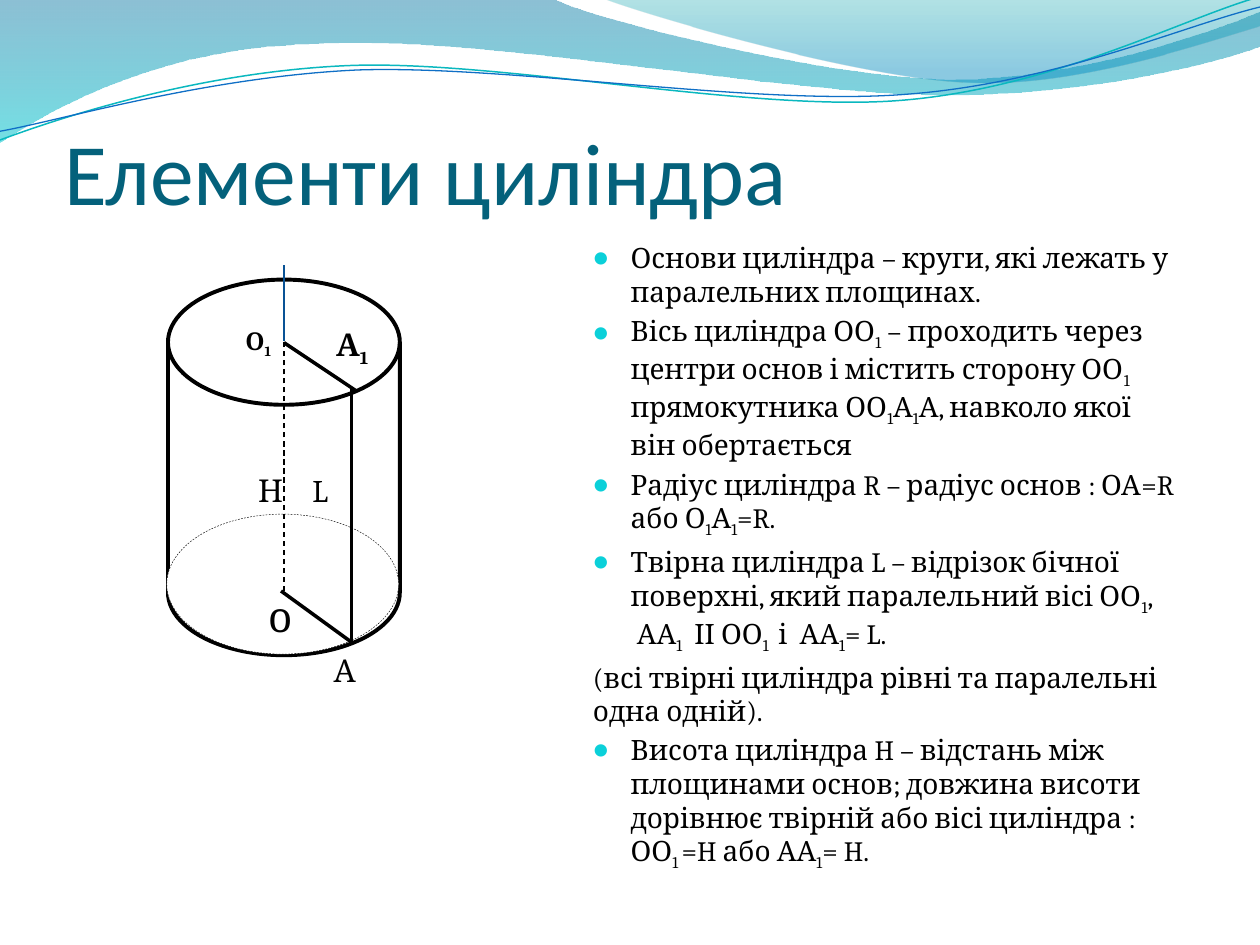
from lxml import etree
from pptx import Presentation
from pptx.dml.color import RGBColor
from pptx.enum.dml import MSO_LINE
from pptx.enum.shapes import MSO_CONNECTOR, MSO_SHAPE
from pptx.enum.text import MSO_ANCHOR
from pptx.oxml.ns import qn
from pptx.util import Pt

STRAIGHT = MSO_CONNECTOR.STRAIGHT
DISK = MSO_SHAPE.FLOWCHART_MAGNETIC_DISK
OVAL = MSO_SHAPE.OVAL
DASH = MSO_LINE.DASH
BOTTOM = MSO_ANCHOR.BOTTOM

COLORS = {
    "black": "000000", "white": "FFFFFF", "title": "04617B", "bullet": "0BD0D9",
    "axis": "095295", "teal": "0AB8BF", "blue": "0F6FC6",
    "wave_top": "0074A1", "wave_bottom": "00C6CF",
    "crest_top": "00A1A9", "crest_bottom": "008BBF",
}
RGB = {name: RGBColor.from_string(value) for name, value in COLORS.items()}

prs = Presentation()
prs.slide_width, prs.slide_height = Pt(720), Pt(540)
s = prs.slides.add_slide(prs.slide_layouts[6])


def add_curve(start, segments, close):
    points = [(Pt(seg[i]), Pt(seg[i + 1])) for seg in segments for i in range(0, len(seg), 2)]
    builder = s.shapes.build_freeform(Pt(start[0]), Pt(start[1]))
    builder.add_line_segments(points, close=close)
    sp = builder.convert_to_shape()
    sp.shadow.inherit = False
    steps = iter(list(sp._element.iter(qn("a:lnTo"))))
    for seg in segments:
        step = next(steps)
        if len(seg) == 6:
            curve = etree.Element(qn("a:cubicBezTo"))
            step.addprevious(curve)
            for part in (step, next(steps), next(steps)):
                curve.append(part[0])
                part.getparent().remove(part)
    return sp


def write(p, text, size, font="Cambria", color="black", bold=False):
    for n, line in enumerate(text.split("\v")):
        if n:
            p.add_line_break()
        for i, piece in enumerate(line.split("|")):
            if not piece:
                continue
            r = p.add_run()
            r.text = piece
            r.font.size = Pt(size)
            r.font.name = font
            r.font.bold = bold
            r.font.color.rgb = RGB[color]
            if i % 2:
                r.font._element.set("baseline", "-25000")


waves = [
    ((-0.5, 0), [(317, -0.5), (343, 12, 478, 45, 546, 45), (614, 45, 690, 19, 720, 6.5),
                 (720.5, 26), (708, 32, 626, 55, 537, 54), (448, 54, 275, 20, 185, 24.5),
                 (93, 26, 33, 60, -0.5, 81.5)],
     [("wave_top", 45), ("wave_bottom", 55)], 1),
    ((345, -0.5), [(366, 8, 491, 45, 554, 47), (616, 50, 692, 23, 720, 15), (720, 0)],
     [("crest_top", 30), ("crest_bottom", 45)], 0.8),
]
for start, segments, stops, end in waves:
    sp = add_curve(start, segments, True)
    sp.line.fill.background()
    sp.fill.gradient()
    sp.fill.gradient_angle = 270
    for stop, (color, opacity), position in zip(sp.fill.gradient_stops, stops, (0, end)):
        stop.color.rgb = RGB[color]
        stop.position = position
    for clr, (color, opacity) in zip(sp._element.spPr.iter(qn("a:srgbClr")), stops):
        etree.SubElement(clr, qn("a:alpha"), val=str(opacity * 1000))

strands = [
    ((0, 80), [(35, 67, 114, 41, 199, 37.5), (284, 34, 427, 64, 513, 57.5),
               (600, 51, 675, 11, 718.5, -1.5)], "teal", 0.85),
    ((0, 75), [(34, 69, 118, 44, 204, 40), (290, 37, 430, 60.5, 516, 54),
               (602, 48, 675, 15, 720, 4)], "blue", 0.75),
]
for start, segments, color, width in strands:
    sp = add_curve(start, segments, False)
    sp.fill.background()
    sp.line.color.rgb = RGB[color]
    sp.line.width = Pt(width)

title = s.shapes.add_textbox(Pt(36.7), Pt(37.4), Pt(648), Pt(90))
tf = title.text_frame
tf.word_wrap = True
tf.vertical_anchor = BOTTOM
tf.margin_left = tf.margin_right = tf.margin_bottom = 0
write(tf.paragraphs[0], "Елементи циліндра", 50, "Calibri", "title")

definitions = [
    ("Основи циліндра – круги, які лежать у паралельних площинах.", True),
    ("Вісь циліндра ОО|1| – проходить через центри основ і містить сторону ОО|1 |"
     "прямокутника ОО|1|А|1|А, навколо якої він обертається", True),
    ("Радіус циліндра R – радіус основ : ОА=R або О|1|А|1|=R.", True),
    ("Твірна циліндра L – відрізок бічної поверхні, який паралельний вісі ОО|1|,\v"
     " АА|1|  ІІ ОО|1 | і  АА|1|= L.", True),
    ("(всі твірні циліндра рівні та паралельні одна одній).", False),
    ("Висота циліндра H – відстань між площинами основ; довжина висоти "
     "дорівнює твірній або вісі циліндра :\vОО|1 |=H або АА|1|= H.", True),
]
body = s.shapes.add_textbox(Pt(331.7), Pt(134), Pt(348), Pt(374))
tf = body.text_frame
tf.word_wrap = True
for i, (text, bulleted) in enumerate(definitions):
    p = tf.add_paragraph() if i else tf.paragraphs[0]
    p.space_before = Pt(3.2)
    write(p, text, 16)
    if bulleted:
        pPr = p._p.get_or_add_pPr()
        pPr.set("marL", str(Pt(21.6)))
        pPr.set("indent", str(-Pt(21.6)))
        clr = etree.SubElement(pPr, qn("a:buClr"))
        etree.SubElement(clr, qn("a:srgbClr"), val=COLORS["bullet"])
        etree.SubElement(pPr, qn("a:buSzPct"), val="95000")
        etree.SubElement(pPr, qn("a:buFont"), typeface="Calibri")
        etree.SubElement(pPr, qn("a:buChar"), char="●")

solids = [
    (DISK, 96, 159.8, 132.5, 214.6, 2.25, None),
    (OVAL, 95.3, 293.8, 132.5, 80, 0.25, DASH),
]
for kind, x, y, w, h, width, dash in solids:
    sp = s.shapes.add_shape(kind, Pt(x), Pt(y), Pt(w), Pt(h))
    sp.shadow.inherit = False
    sp.fill.solid()
    sp.fill.fore_color.rgb = RGB["white"]
    sp.line.color.rgb = RGB["black"]
    sp.line.width = Pt(width)
    sp.line.dash_style = dash

segments = [
    (162.3, 337.7, 162.3, 195, "black", 0.75, DASH),
    (162.3, 195.8, 203, 223, "black", 2, None),
    (200.9, 221, 200.9, 366.5, "black", 2, None),
    (160.6, 337.7, 200.9, 367, "black", 2, None),
    (162.3, 195, 162.3, 151.2, "axis", 0.75, None),
]
for x1, y1, x2, y2, color, width, dash in segments:
    c = s.shapes.add_connector(STRAIGHT, Pt(x1), Pt(y1), Pt(x2), Pt(y2))
    c.line.color.rgb = RGB[color]
    c.line.width = Pt(width)
    c.line.dash_style = dash
    etree.SubElement(c._element.spPr, qn("a:effectLst"))

labels = [
    ("о", 146.2, 334, 16, 36, 24, False),
    ("О|1", 133.2, 182.9, 36, 24.5, 14, True),
    ("А", 183.6, 368.6, 28, 29, 18, False),
    ("А|1", 185, 182.2, 45.4, 51, 18, True),
    ("Н", 140.4, 265.7, 22.3, 29, 18, False),
    ("L", 171.4, 265.7, 28.8, 29, 18, False),
]
for text, x, y, w, h, size, bold in labels:
    label = s.shapes.add_textbox(Pt(x), Pt(y), Pt(w), Pt(h))
    label.text_frame.word_wrap = True
    write(label.text_frame.paragraphs[0], text, size, bold=bold)

prs.save("out.pptx")
